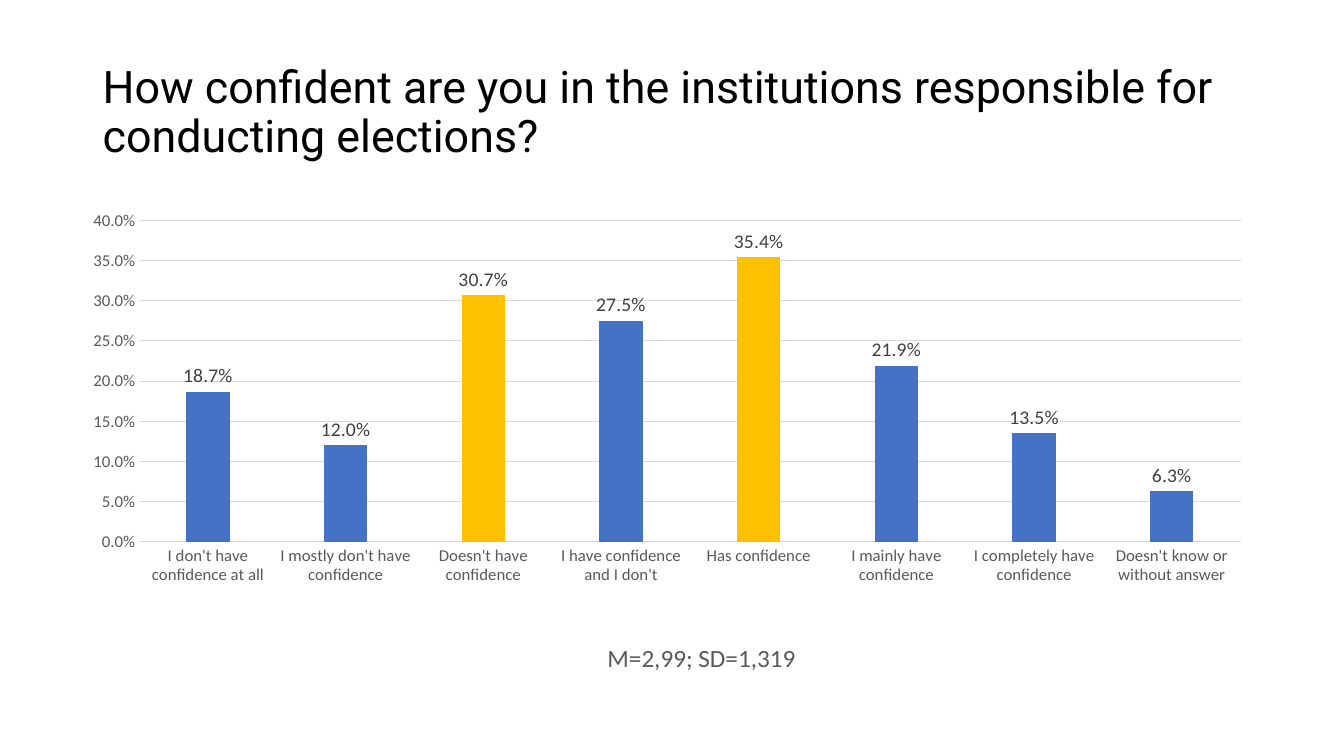
"""Build a slide with a column chart on confidence in electoral institutions."""
from lxml import etree
from pptx import Presentation
from pptx.chart.data import CategoryChartData
from pptx.dml.color import RGBColor
from pptx.enum.chart import XL_CHART_TYPE as ChartType, XL_LABEL_POSITION as LabelPos
from pptx.enum.chart import XL_TICK_MARK as Tick
from pptx.enum.text import MSO_ANCHOR as Anchor
from pptx.oxml.ns import qn
from pptx.util import Inches, Pt

BLACK = RGBColor(0, 0, 0)
WHITE = RGBColor(255, 255, 255)
DARK = RGBColor(0x40, 0x40, 0x40)
GRAY = RGBColor(0x59, 0x59, 0x59)
RULE = RGBColor(0xD9, 0xD9, 0xD9)
BLUE = RGBColor(0x44, 0x72, 0xC4)
GOLD = RGBColor(0xFF, 0xC0, 0x00)

QUESTION = "How confident are you in the institutions responsible for conducting elections?"
SUMMARY = "M=2,99; SD=1,319"
ANSWERS = {
    "I don't have confidence at all": 0.187,
    "I mostly don't have confidence": 0.12,
    "Doesn't have confidence": 0.307,
    "I have confidence and I don't": 0.275,
    "Has confidence": 0.354,
    "I mainly have confidence": 0.219,
    "I completely have confidence": 0.135,
    "Doesn't know or without answer": 0.063,
}
TOTALS = ("Doesn't have confidence", "Has confidence")


def style_font(font, size, color, name="Calibri"):
    """Set the look of a font."""
    for key, value in {"size": Pt(size), "name": name, "bold": False}.items():
        setattr(font, key, value)
    font.color.rgb = color


def style_line(line):
    """Give a line the thin light rule format."""
    line.color.rgb = RULE
    line.width = Pt(0.75)


def set_layout(parent, index, **values):
    """Place a chart part by fractions of the chart area."""
    for old in parent.findall(qn("c:layout")):
        parent.remove(old)
    layout = etree.Element(qn("c:layout"))
    manual = etree.SubElement(layout, qn("c:manualLayout"))
    for key, value in values.items():
        etree.SubElement(manual, qn("c:" + key)).set("val", str(value))
    parent.insert(index, layout)


def add_title(s):
    """Add the question as the slide heading."""
    tf = s.shapes.add_textbox(Inches(0.92), Inches(0.4), Inches(11.5), Inches(1.45)).text_frame
    for key, value in {"word_wrap": True, "vertical_anchor": Anchor.MIDDLE}.items():
        setattr(tf, key, value)
    p = tf.paragraphs[0]
    p.line_spacing = 0.9
    r = p.add_run()
    r.text = QUESTION
    style_font(r.font, 32, BLACK, "Roboto")


def style_axes(chart):
    """Format both axes and the gridlines."""
    for axis in (chart.category_axis, chart.value_axis):
        axis.major_tick_mark = axis.minor_tick_mark = Tick.NONE
        style_font(axis.tick_labels.font, 12, GRAY)
    style_line(chart.category_axis.format.line)
    value_axis = chart.value_axis
    for key, value in {"minimum_scale": 0, "maximum_scale": 0.4, "major_unit": 0.05}.items():
        setattr(value_axis, key, value)
    value_axis.format.line.fill.background()
    style_line(value_axis.major_gridlines.format.line)
    value_axis.tick_labels.number_format = "0.0%"
    value_axis.tick_labels.number_format_is_linked = False


def style_columns(plot):
    """Colour the columns and label their values."""
    for key, value in {"gap_width": 219, "overlap": -27, "vary_by_categories": False}.items():
        setattr(plot, key, value)
    series = plot.series[0]
    series.format.fill.solid()
    series.format.fill.fore_color.rgb = BLUE
    for i, answer in enumerate(ANSWERS):
        if answer in TOTALS:
            fill = series.points[i].format.fill
            fill.solid()
            fill.fore_color.rgb = GOLD
    labels = series.data_labels
    formats = {"show_value": True, "number_format": "0.0%",
               "number_format_is_linked": False, "position": LabelPos.OUTSIDE_END}
    for key, value in formats.items():
        setattr(labels, key, value)
    style_font(labels.font, 14, DARK)


def add_summary(chart):
    """Show the mean and deviation as a chart title below the columns."""
    title = chart.chart_title
    r = title.text_frame.paragraphs[0].add_run()
    r.text = SUMMARY
    style_font(r.font, 18, GRAY)
    title.include_in_layout = False
    set_layout(title._element, 1, xMode="edge", yMode="edge", x=0.44, y=0.92)


def add_answer_chart(s):
    """Add the column chart of answers."""
    data = CategoryChartData(number_format="0.0%")
    data.categories = list(ANSWERS)
    data.add_series("Series 1", list(ANSWERS.values()))
    chart = s.shapes.add_chart(ChartType.COLUMN_CLUSTERED, Inches(0.92), Inches(2),
                               Inches(11.5), Inches(4.76), data).chart
    chart.has_legend = False
    style_font(chart.font, 10, BLACK)
    style_axes(chart)
    style_columns(chart.plots[0])
    add_summary(chart)
    set_layout(chart._chartSpace.chart.plotArea, 0, layoutTarget="inner", xMode="edge",
               yMode="edge", x=0.04, y=0.04, w=0.95, h=0.68)


def main():
    """Create and save the slide."""
    prs = Presentation()
    prs.slide_width, prs.slide_height = Inches(13.33), Inches(7.5)
    s = prs.slides.add_slide(prs.slide_layouts[6])
    s.background.fill.solid()
    s.background.fill.fore_color.rgb = WHITE
    add_title(s)
    add_answer_chart(s)
    prs.save("out.pptx")


if __name__ == "__main__":
    main()
